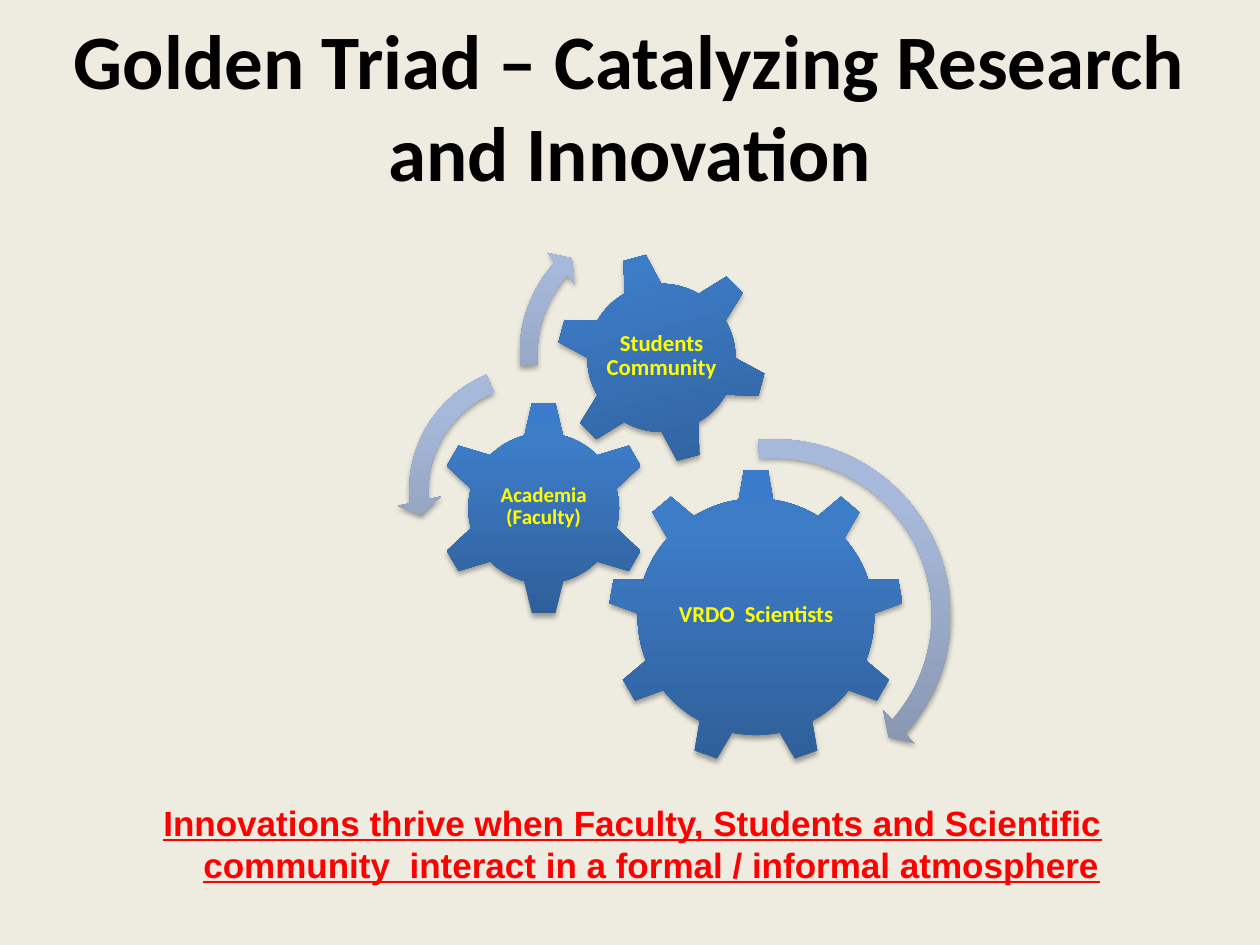
import copy
from dataclasses import dataclass

import pptx
import pptx.dml.color
import pptx.enum.shapes
import pptx.enum.text
import pptx.oxml
import pptx.oxml.ns
import pptx.util

Pt = pptx.util.Pt
Kind = pptx.enum.shapes.MSO_SHAPE
Align = pptx.enum.text.PP_ALIGN
Anchor = pptx.enum.text.MSO_ANCHOR
qn = pptx.oxml.ns.qn


@dataclass(frozen=True)
class Theme:
    back: str = "EEECE1"
    ink: str = "000000"
    label: str = "FFFF00"
    note: str = "FF0000"
    gear: tuple = ("2F5F99", "3D7CC7", "3A7CCB")
    arrow: tuple = ("818FA8", "A7B9DA", "A7BADC")
    stops: tuple = (0, 0.8, 1)
    head: str = "Calibri"
    body: str = "Arial"
    big: int = 44
    mid: int = 20
    small: int = 13
    tiny: int = 12


THEME = Theme()

GEARS = [
    (Kind.GEAR_9, 432, 352.5, 169, 0, "VRDO  Scientists", 102, 87, THEME.small),
    (Kind.GEAR_6, 310.7, 290.5, 123, 0, "Academia (Faculty)", 62, 60, THEME.tiny),
    (Kind.GEAR_6, 378, 204.5, 121, 345, "Students Community", 68, 68, THEME.small),
]

ARROWS = [
    (Kind.CIRCULAR_ARROW, 442.5, 351.7, 216.7, (0.05, 2.99, 25.09, 158.77, 0.06)),
    (Kind.LEFT_CIRCULAR_ARROW, 305.6, 280.4, 157.7, (0.07, 4.3, 104.89, 148.38, 0.08)),
    (Kind.CIRCULAR_ARROW, 375.1, 202.3, 169.9, (0.06, 3.94, 133.14, 105.08, 0.07)),
]


def rgb(code):
    return pptx.dml.color.RGBColor.from_string(code)


def center(x, y, wide, high):
    return [Pt(v) for v in (x - wide / 2, y - high / 2, wide, high)]


def write(frame, text, size, font, color, line=False):
    frame.word_wrap = True
    para = frame.paragraphs[0]
    para.alignment = Align.CENTER
    run = para.add_run()
    run.text = text
    run.font.size = Pt(size)
    run.font.name = font
    run.font.bold = True
    run.font.color.rgb = rgb(color)
    if line:
        run.font.underline = True
    return para


def shade(shape, colors):
    fill = shape.fill
    fill.gradient()
    fill.gradient_angle = 90
    stops = shape._element.spPr.find(qn("a:gradFill")).find(qn("a:gsLst"))
    stops.append(copy.deepcopy(stops[-1]))
    for stop, place, color in zip(fill.gradient_stops, THEME.stops, colors):
        stop.position = place
        stop.color.rgb = rgb(color)


def shadow(shape):
    shape.shadow.inherit = False
    space = pptx.oxml.ns.nsdecls("a")
    shape._element.spPr.find(qn("a:effectLst")).append(pptx.oxml.parse_xml(
        f'<a:outerShdw {space} blurRad="{Pt(3.1)}" dist="{Pt(1.8)}" dir="5400000" '
        f'rotWithShape="0"><a:srgbClr val="{THEME.ink}"><a:alpha val="35000"/>'
        '</a:srgbClr></a:outerShdw>'))


def add_form(slide, kind, x, y, size, colors):
    shape = slide.shapes.add_shape(kind, *center(x, y, size, size))
    shape.line.fill.background()
    shade(shape, colors)
    shadow(shape)
    return shape


def add_gear(slide, kind, x, y, size, turn, text, wide, high, type_size):
    add_form(slide, kind, x, y, size, THEME.gear).rotation = turn
    frame = slide.shapes.add_textbox(*center(x, y - 1, wide, high)).text_frame
    frame.margin_left = frame.margin_right = Pt(1.3)
    frame.margin_top = frame.margin_bottom = Pt(1.3)
    frame.vertical_anchor = Anchor.MIDDLE
    para = write(frame, text, type_size, THEME.head, THEME.label)
    para.line_spacing = 0.9


def add_arrow(slide, kind, x, y, size, bends):
    shape = add_form(slide, kind, x, y, size, THEME.arrow)
    for i, bend in enumerate(bends):
        shape.adjustments[i] = bend


def add_title(slide, text):
    title = slide.shapes.title
    title.left, title.top, title.width, title.height = Pt(0), Pt(0), Pt(720), Pt(120)
    title.text_frame.vertical_anchor = Anchor.MIDDLE
    write(title.text_frame, text, THEME.big, THEME.head, THEME.ink)


def add_note(slide, text):
    frame = slide.shapes.add_textbox(Pt(37.5), Pt(432), Pt(648), Pt(132)).text_frame
    frame.margin_top = Pt(26)
    para = write(frame, text, THEME.mid, THEME.body, THEME.note, line=True)
    props = para._p.get_or_add_pPr()
    props.set("marL", str(Pt(21.6)))
    props.set("indent", str(Pt(-21.6)))


def main():
    deck = pptx.Presentation()
    deck.slide_width, deck.slide_height = Pt(720), Pt(540)
    slide = deck.slides.add_slide(deck.slide_layouts.get_by_name("Title Only"))
    slide.background.fill.solid()
    slide.background.fill.fore_color.rgb = rgb(THEME.back)
    add_title(slide, "Golden Triad – Catalyzing Research and Innovation")
    add_note(slide, "Innovations thrive when Faculty, Students and Scientific "
                    "community  interact in a formal / informal atmosphere")
    for gear in GEARS:
        add_gear(slide, *gear)
    for arrow in ARROWS:
        add_arrow(slide, *arrow)
    deck.save("out.pptx")


if __name__ == "__main__":
    main()
